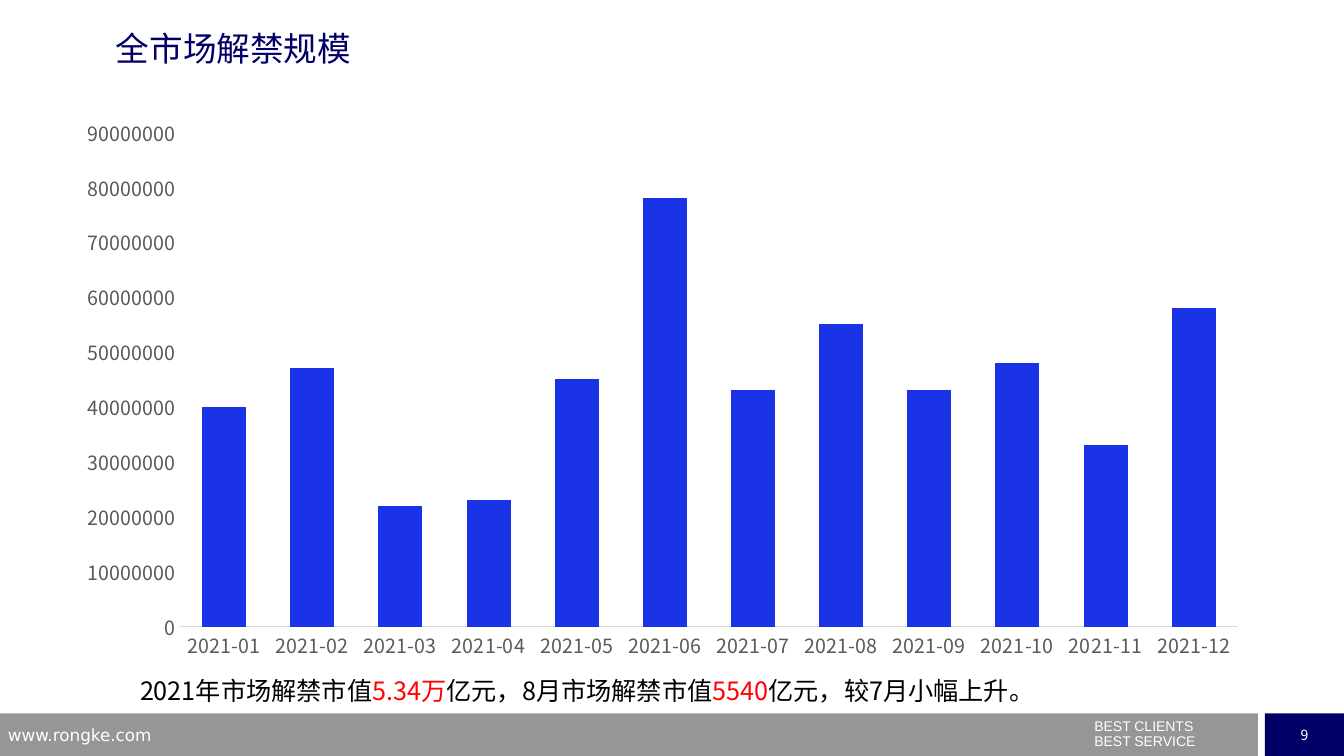
"""Build the slide on market-wide lock-up expiry volumes in 2021."""
from dataclasses import dataclass

import pptx
import pptx.chart.data
import pptx.dml.color
import pptx.enum.chart
import pptx.enum.shapes
import pptx.enum.text
import pptx.oxml
import pptx.oxml.ns
import pptx.util

Cm = pptx.util.Cm
Pt = pptx.util.Pt
RGBColor = pptx.dml.color.RGBColor

NAVY = RGBColor(0x00, 0x00, 0x66)
GREY = RGBColor(0x96, 0x96, 0x96)
WHITE = RGBColor(0xFF, 0xFF, 0xFF)
BLACK = RGBColor(0x00, 0x00, 0x00)
RED = RGBColor(0xFF, 0x00, 0x00)
BAR_BLUE = RGBColor(0x1B, 0x33, 0xE7)
AXIS_TEXT = RGBColor(0x59, 0x59, 0x59)
AXIS_LINE = RGBColor(0xD9, 0xD9, 0xD9)
CJK = "Noto Sans CJK SC"

FOOTER_TOP = 17.98
FOOTER_HEIGHT = 1.07
MONTHLY_MILLIONS = (40, 47, 22, 23, 45, 78, 43, 55, 43, 48, 33, 58)


@dataclass(frozen=True)
class Box:
    """Position and size in centimetres."""
    left: float
    top: float
    width: float
    height: float

    def lengths(self) -> tuple:
        """Return the four lengths in the order python-pptx takes them."""
        return Cm(self.left), Cm(self.top), Cm(self.width), Cm(self.height)


@dataclass(frozen=True)
class Span:
    """A stretch of text in one colour."""
    text: str
    color: RGBColor


def write(frame, paragraphs: list[list[Span]], *, size: float, font: str = CJK,
          align=pptx.enum.text.PP_ALIGN.LEFT, line_spacing: float = 1.0,
          gap: float = 0) -> None:
    """Fill a text frame with paragraphs of coloured spans."""
    for index, spans in enumerate(paragraphs):
        paragraph = frame.add_paragraph() if index else frame.paragraphs[0]
        paragraph.alignment = align
        paragraph.line_spacing = line_spacing
        if index:
            paragraph.space_before = Pt(gap)
        for span in spans:
            run = paragraph.add_run()
            run.text = span.text
            run.font.size = Pt(size)
            run.font.color.rgb = span.color
            run.font.name = font
            east_asian = pptx.oxml.parse_xml(
                f'<a:ea {pptx.oxml.ns.nsdecls("a")} typeface="{font}"/>')
            run.font._element.append(east_asian)


def add_text(slide, box: Box, paragraphs: list[list[Span]], *,
             inset: bool = True, **text_format) -> None:
    """Add a wrapping text box."""
    frame = slide.shapes.add_textbox(*box.lengths()).text_frame
    frame.word_wrap = True
    if not inset:
        frame.margin_left = frame.margin_right = 0
        frame.margin_top = frame.margin_bottom = 0
    write(frame, paragraphs, **text_format)


def add_band(slide, box: Box, color: RGBColor):
    """Add a plain footer rectangle."""
    band = slide.shapes.add_shape(
        pptx.enum.shapes.MSO_SHAPE.RECTANGLE, *box.lengths())
    band.shadow.inherit = False
    band.fill.solid()
    band.fill.fore_color.rgb = color
    band.line.fill.background()
    return band


def add_footer(slide) -> None:
    """Draw the footer bands, web address, motto and page number."""
    add_band(slide, Box(0, FOOTER_TOP, 31.7, FOOTER_HEIGHT), GREY)
    page = add_band(slide, Box(31.88, FOOTER_TOP, 1.99, FOOTER_HEIGHT), NAVY)
    page.text_frame.word_wrap = False
    page.text_frame.vertical_anchor = pptx.enum.text.MSO_ANCHOR.MIDDLE
    write(page.text_frame, [[Span("9", WHITE)]], size=10,
          align=pptx.enum.text.PP_ALIGN.CENTER)
    add_text(slide, Box(27.33, 18.14, 6.5, 0.91),
             [[Span("BEST CLIENTS", WHITE)], [Span("BEST SERVICE", WHITE)]],
             size=10, font="Arial", line_spacing=0.5, gap=5)
    add_text(slide, Box(-0.05, 18.14, 8.18, 0.66),
             [[Span("www.rongke.com", WHITE)]], size=12, font="DejaVu Sans")


def add_expiry_chart(slide, box: Box) -> None:
    """Draw the monthly column chart."""
    monthly = pptx.chart.data.CategoryChartData(number_format="General")
    monthly.categories = [f"2021-{month:02d}" for month in range(1, 13)]
    monthly.add_series(
        "解禁市值", [value * 1_000_000 for value in MONTHLY_MILLIONS])
    chart = slide.shapes.add_chart(
        pptx.enum.chart.XL_CHART_TYPE.COLUMN_CLUSTERED, *box.lengths(),
        monthly).chart
    chart.has_legend = False
    chart.has_title = False
    chart.font.size = Pt(14)
    chart.font.name = CJK

    columns = chart.plots[0]
    columns.gap_width = 100
    columns.overlap = -27
    columns.vary_by_categories = False
    columns.series[0].format.fill.solid()
    columns.series[0].format.fill.fore_color.rgb = BAR_BLUE

    months, amounts = chart.category_axis, chart.value_axis
    for axis in (months, amounts):
        axis.has_major_gridlines = False
        axis.major_tick_mark = pptx.enum.chart.XL_TICK_MARK.NONE
        axis.minor_tick_mark = pptx.enum.chart.XL_TICK_MARK.NONE
        axis.tick_labels.font.size = Pt(14)
        axis.tick_labels.font.name = CJK
        axis.tick_labels.font.color.rgb = AXIS_TEXT
    months.format.line.color.rgb = AXIS_LINE
    months.format.line.width = Pt(0.75)
    amounts.format.line.fill.background()
    amounts.minimum_scale = 0
    amounts.maximum_scale = 90_000_000
    amounts.major_unit = 10_000_000


def main() -> None:
    """Assemble and save the slide."""
    deck = pptx.Presentation()
    deck.slide_width, deck.slide_height = Cm(33.87), Cm(19.05)
    slide = deck.slides.add_slide(deck.slide_layouts[6])
    add_footer(slide)
    add_text(slide, Box(2.92, 0.71, 22.86, 1.17),
             [[Span("全市场解禁规模", NAVY)]], size=24, inset=False)
    add_text(slide, Box(3.28, 16.89, 29.54, 1.02),
             [[Span("2021年市场解禁市值", BLACK), Span("5.34万", RED),
               Span("亿元，8月市场解禁市值", BLACK), Span("5540", RED),
               Span("亿元，较7月小幅上升。", BLACK)]], size=18)
    add_expiry_chart(slide, Box(1.6, 2.69, 30.2, 14.2))
    deck.save("out.pptx")


if __name__ == "__main__":
    main()
